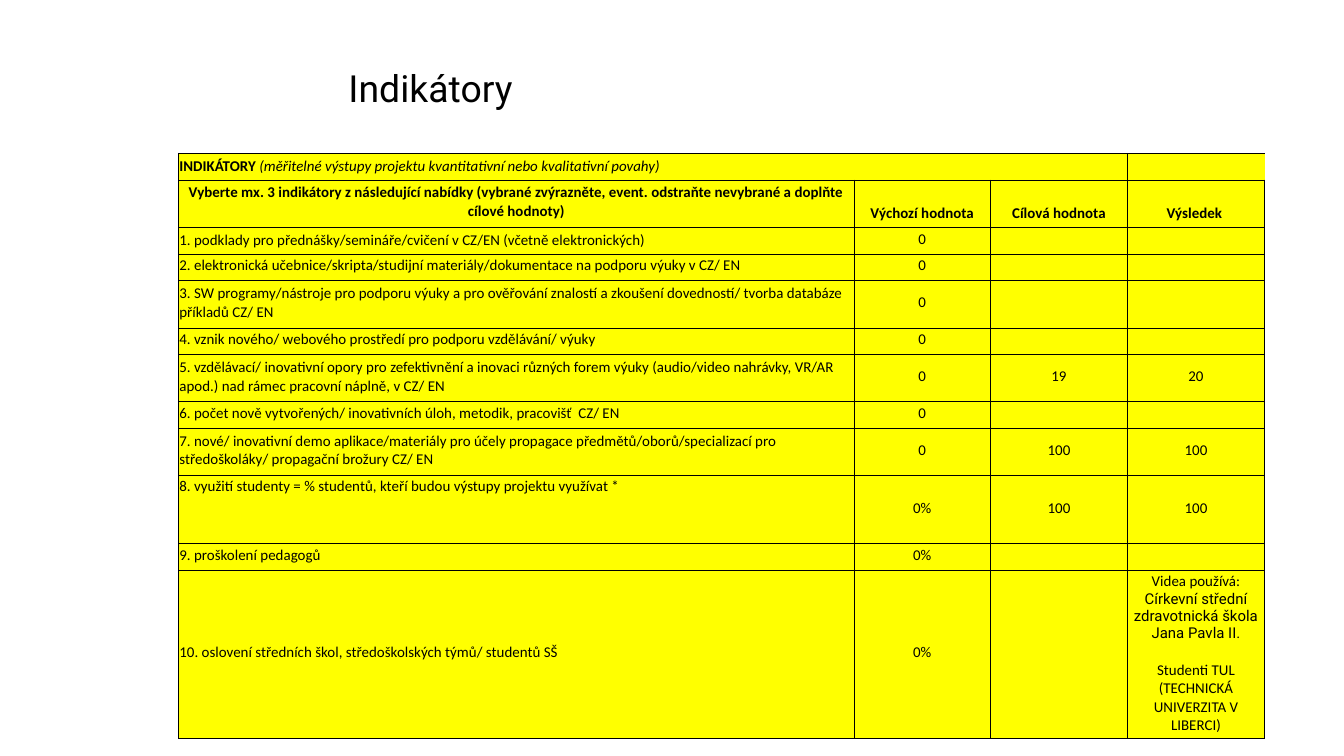
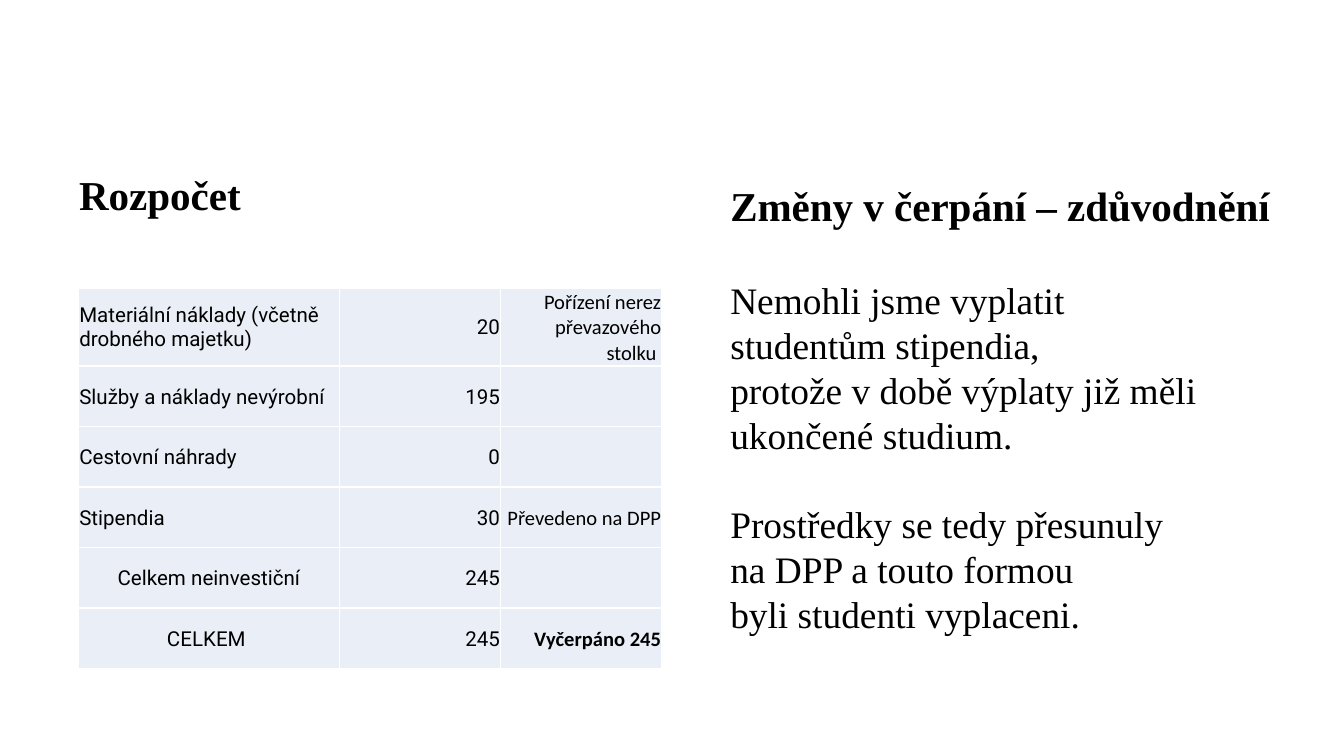
from lxml import etree
from pptx import Presentation
from pptx import util as u
from pptx.dml.color import RGBColor
from pptx.enum import text
from pptx.oxml.ns import qn

PX = 4572  # 200 px to the inch
BLACK = RGBColor(0, 0, 0)
WHITE = RGBColor(255, 255, 255)
YELLOW = RGBColor(255, 255, 0)
PALE_BLUE = RGBColor(0xEA, 0xEF, 0xF7)
SANS, TABLE_SANS, SERIF = "Roboto", "Calibri", "Times New Roman"
LEFT, CENTER, RIGHT = text.PP_ALIGN.LEFT, text.PP_ALIGN.CENTER, text.PP_ALIGN.RIGHT
TOP, MIDDLE, BOTTOM = text.MSO_ANCHOR.TOP, text.MSO_ANCHOR.MIDDLE, text.MSO_ANCHOR.BOTTOM


def write(frame, words, size=8, font=TABLE_SANS, bold=False, italic=False,
          align=LEFT, before=0, spacing=None, same_line=False):
    para = frame.paragraphs[-1]
    if para.runs and not same_line:
        para = frame.add_paragraph()
    para.alignment = align
    if before:
        para.space_before = u.Pt(before)
    if spacing:
        para.line_spacing = spacing
    if not words:
        etree.SubElement(para._p, qn("a:endParaRPr"), sz=str(size * 100))
        return
    span = para.add_run()
    span.text = words
    span.font.size = u.Pt(size)
    span.font.name = font
    span.font.bold = bold
    span.font.italic = italic
    span.font.color.rgb = BLACK


def style_cell(cell, fill, line, points, sides="LRTB", bottom=0, anchor=MIDDLE):
    cell.margin_left = cell.margin_right = PX
    cell.margin_top = 2 * PX
    cell.margin_bottom = bottom * PX
    cell.vertical_anchor = anchor
    props = cell._tc.get_or_add_tcPr()
    for side in "LRTB":
        edge = etree.SubElement(props, qn("a:ln" + side), w=str(u.Pt(points)))
        if side in sides:
            solid = etree.SubElement(edge, qn("a:solidFill"))
            etree.SubElement(solid, qn("a:srgbClr"), val=str(line))
        else:
            etree.SubElement(edge, qn("a:noFill"))
    cell.fill.solid()
    cell.fill.fore_color.rgb = fill


deck = Presentation()
deck.slide_width, deck.slide_height = 2000 * PX, 1125 * PX
indicator_page, budget_page = [deck.slides.add_slide(deck.slide_layouts[6]) for _ in range(2)]

# Text boxes of both slides
frames = []
for page, place, wrap in [
    (indicator_page, (499, 95, 300, 100), True),
    (budget_page, (98, 251, 802, 100), True),
    (budget_page, (1067, 258, 884, 94), False),
    (budget_page, (1067, 403, 735, 626), True),
]:
    box = page.shapes.add_textbox(*[n * PX for n in place])
    box.text_frame.word_wrap = wrap
    box.text_frame.vertical_anchor = TOP
    frames.append(box.text_frame)
indicator_title, budget_title, changes_title, changes = frames

write(indicator_title, "Indikátory", size=20, font=SANS, spacing=0.9)
write(budget_title, "Rozpočet", size=22, font=SERIF, bold=True, spacing=0.9)
write(changes_title, "Změny v čerpání – zdůvodnění", size=22, font=SERIF, bold=True)
for words, before in [
    ("Nemohli jsme vyplatit studentům stipendia,", 0),
    ("protože v době výplaty již měli ukončené studium.", 0),
    ("Prostředky se tedy přesunuly na DPP a touto formou", 24),
    ("byli studenti vyplaceni.", 0),
]:
    write(changes, words, size=20, font=SERIF, before=before)

# Tables: row height and cell texts
indicators = [
    (40, "", "", "", ""),
    (70, "Vyberte mx. 3 indikátory z následující nabídky (vybrané zvýrazněte, event. odstraňte "
         "nevybrané a doplňte cílové hodnoty)", "Výchozí hodnota", "Cílová hodnota", "Výsledek "),
    (40, "1. podklady pro přednášky/semináře/cvičení v CZ/EN (včetně elektronických)", "0", "", ""),
    (40, "2. elektronická učebnice/skripta/studijní materiály/dokumentace na podporu výuky v CZ/ EN",
     "0", "", ""),
    (70, "3. SW programy/nástroje pro podporu výuky a pro ověřování znalostí a zkoušení dovedností/ "
         "tvorba databáze příkladů CZ/ EN", "0", "", ""),
    (40, "4. vznik nového/ webového prostředí pro podporu vzdělávání/ výuky", "0", "", ""),
    (70, "5. vzdělávací/ inovativní opory pro zefektivnění a inovaci různých forem výuky (audio/video "
         "nahrávky, VR/AR apod.) nad rámec pracovní náplně, v CZ/ EN", "0", "19", "20"),
    (40, "6. počet nově vytvořených/ inovativních úloh, metodik, pracovišť  CZ/ EN", "0", "", ""),
    (70, "7. nové/ inovativní demo aplikace/materiály pro účely propagace předmětů/oborů/specializací "
         "pro středoškoláky/ propagační brožury CZ/ EN", "0", "100", "100"),
    (101, "8. využití studenty = % studentů, kteří budou výstupy projektu využívat *",
     "0%", "100", "100"),
    (40, "9. proškolení pedagogů", "0%", "", ""),
    (214, "10. oslovení středních škol, středoškolských týmů/ studentů SŠ", "0%", "", None),
]
budget = [
    (116, "Materiální náklady (včetně drobného majetku)", "20", "Pořízení nerez převazového stolku "),
    (90, "Služby a náklady nevýrobní", "195", ""),
    (90, "Cestovní náhrady", "0", ""),
    (90, "Stipendia", "30", "Převedeno na DPP"),
    (90, "Celkem neinvestiční", "245", ""),
    (90, "CELKEM ", "245", "Vyčerpáno 245"),
]
grids = []
for page, rows, widths, left, top in [
    (indicator_page, indicators, (1005, 203, 204, 204), 266, 228),
    (budget_page, budget, (388, 240, 240), 117, 429),
]:
    height = sum(row[0] for row in rows)
    grid = page.shapes.add_table(len(rows), len(widths), left * PX, top * PX,
                                 sum(widths) * PX, height * PX).table
    grid.first_row = grid.horz_banding = False
    for column, width in zip(grid.columns, widths):
        column.width = width * PX
    for line, row in zip(grid.rows, rows):
        line.height = row[0] * PX
    grids.append(grid)
indicator_grid, budget_grid = grids

# Indicator cells
for r, (_, *cells) in enumerate(indicators):
    for c, words in enumerate(cells):
        cell = indicator_grid.cell(r, c)
        anchor = MIDDLE
        if r == 0 or (r == 1 and c) or (r == 2 and c == 0):
            anchor = BOTTOM
        elif r == 9 and c == 0:
            anchor = TOP
        sides = "LTB" if (r, c) == (0, 3) else "LRTB"
        style_cell(cell, YELLOW, BLACK, 0.5, sides, bottom=7, anchor=anchor)
        if words is not None and (r, c) != (0, 0):
            write(cell.text_frame, words, bold=r == 1, align=CENTER if c or r == 1 else LEFT)

heading = indicator_grid.cell(0, 0)
heading.merge(indicator_grid.cell(0, 2))
write(heading.text_frame, "INDIKÁTORY ", bold=True)
write(heading.text_frame, "(měřitelné výstupy projektu kvantitativní nebo kvalitativní povahy)",
      italic=True, same_line=True)

outreach = indicator_grid.cell(11, 3).text_frame
write(outreach, "Videa používá:", align=CENTER)
write(outreach, "Církevní střední zdravotnická škola Jana Pavla II.", font=SANS, align=CENTER)
write(outreach, "Studenti TUL", align=CENTER, before=10)
write(outreach, "(TECHNICKÁ UNIVERZITA V LIBERCI)", align=CENTER)

# Budget cells
for r, (_, *cells) in enumerate(budget):
    for c, words in enumerate(cells):
        cell = budget_grid.cell(r, c)
        style_cell(cell, PALE_BLUE, WHITE, 1)
        label_align = CENTER if r >= 4 else LEFT
        write(cell.text_frame, words, size=11, font=TABLE_SANS if c == 2 else SANS,
              bold=(r, c) == (5, 2), align=RIGHT if c else label_align)

deck.save("out.pptx")
